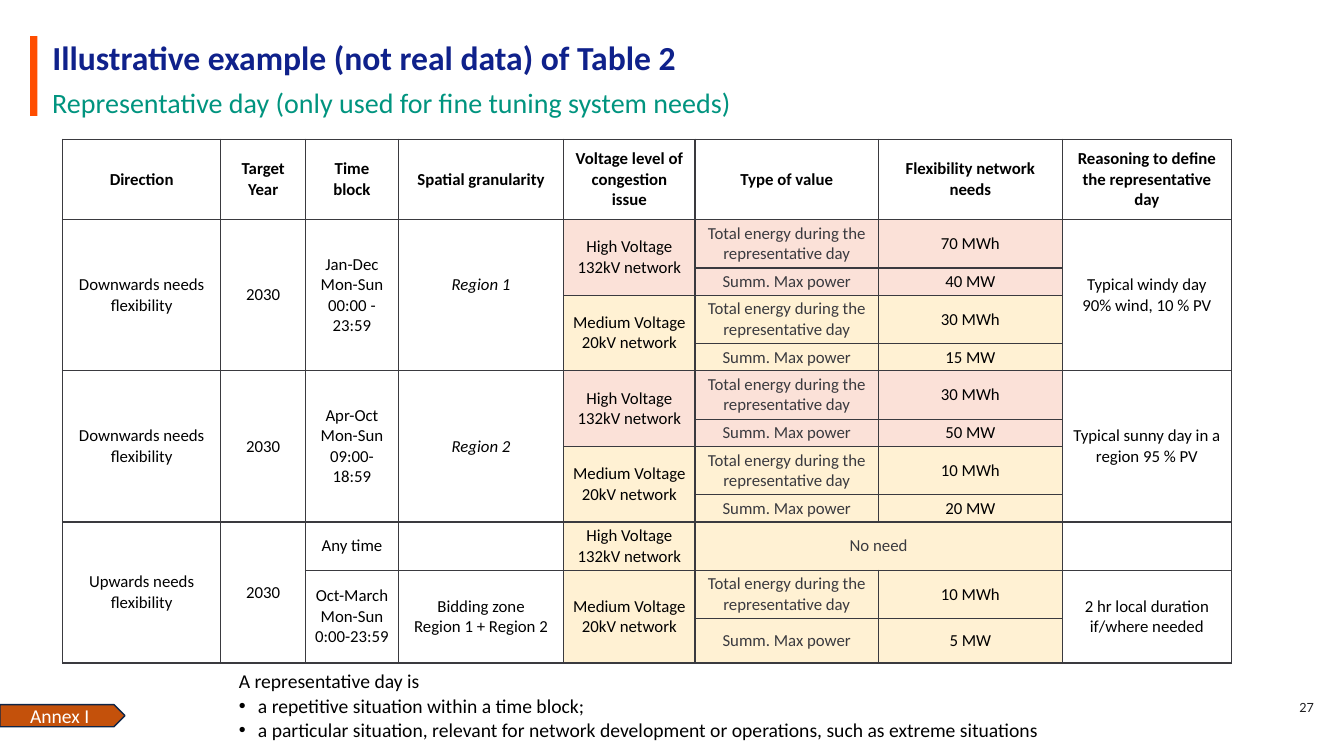
from dataclasses import dataclass
from typing import Any

from lxml.etree import SubElement
from pptx import Presentation
from pptx.dml.color import RGBColor
from pptx.enum.shapes import MSO_SHAPE as Shape
from pptx.enum.text import MSO_ANCHOR as Anchor, MSO_AUTO_SIZE as AutoSize, PP_ALIGN as Align
from pptx.oxml.ns import qn
from pptx.util import Inches, Pt

WIDTH, HEIGHT = Inches(13.33), Inches(7.5)
GREY, BLACK = "3A3A3F", "000000"
PINK, CREAM = "FBE1D8", "FFF1D3"
COLS = (1.57, 0.84, 0.92, 1.64, 1.3, 1.82, 1.82, 1.68)
ROWS = (0.8, *(0.48, 0.27) * 4, 0.48, 0.48, 0.44)
HEADERS = ("Direction", "Target Year", "Time\nblock", "Spatial granularity",
           "Voltage level of\ncongestion\nissue", "Type of value",
           "Flexibility network needs", "Reasoning to define the representative day")
HIGH, MEDIUM = "High Voltage\n132kV network", "Medium Voltage 20kV network"


@dataclass
class Box:
    """Place and size in percent of the slide."""
    x: float
    y: float
    w: float
    h: float

    def emu(self) -> tuple[int, ...]:
        sides = (WIDTH, HEIGHT, WIDTH, HEIGHT)
        return tuple(round(v * s / 100)
                     for v, s in zip((self.x, self.y, self.w, self.h), sides))


@dataclass
class Entry:
    """One table cell, with the rows and columns it spans."""
    row: int
    col: int
    text: str
    rows: int = 1
    cols: int = 1
    fill: str | None = None
    color: str = BLACK
    bold: bool = False
    italic: bool = False
    bottom: float = 0.035


@dataclass
class Need:
    """Energy and power needed at one voltage level, on two rows."""
    row: int
    level: str
    fill: str
    energy: str
    power: str

    def entries(self) -> list[Entry]:
        found = [Entry(self.row, 4, self.level, rows=2, fill=self.fill)]
        kinds = (("Total energy during the representative day", self.energy),
                 ("Summ. Max power", self.power))
        for r, (kind, value) in enumerate(kinds, self.row):
            found += [Entry(r, 5, kind, fill=self.fill, color=GREY),
                      Entry(r, 6, value, fill=self.fill)]
        return found


ENTRIES = [Entry(0, c, text, bold=True) for c, text in enumerate(HEADERS)]
for row, span, direction in ((1, 4, "Downwards"), (5, 4, "Downwards"), (9, 3, "Upwards")):
    ENTRIES += [Entry(row, 0, f"{direction} needs flexibility", rows=span),
                Entry(row, 1, "2030", rows=span)]
ENTRIES += [
    Entry(1, 2, "Jan-Dec\nMon-Sun\n00:00 - 23:59", rows=4),
    Entry(1, 3, "Region 1", rows=4, italic=True, bottom=0.24),
    Entry(1, 7, "Typical windy day\n90% wind, 10 % PV", rows=4),
    Entry(5, 2, "Apr-Oct\nMon-Sun\n09:00-18:59", rows=4),
    Entry(5, 3, "Region 2", rows=4, italic=True),
    Entry(5, 7, "Typical sunny day in a region 95 % PV", rows=4),
    Entry(9, 2, "Any time"),
    Entry(9, 4, HIGH, fill=CREAM),
    Entry(9, 5, "No need", cols=2, fill=CREAM, color=GREY),
    Entry(10, 2, "Oct-March\nMon-Sun\n0:00-23:59", rows=2),
    Entry(10, 3, "Bidding zone\nRegion 1 + Region 2", rows=2),
    Entry(10, 7, "2 hr local duration if/where needed", rows=2),
]
for need in (Need(1, HIGH, PINK, "70 MWh", "40 MW"),
             Need(3, MEDIUM, CREAM, "30 MWh", "15 MW"),
             Need(5, HIGH, PINK, "30 MWh", "50 MW"),
             Need(7, MEDIUM, CREAM, "10 MWh", "20 MW"),
             Need(10, MEDIUM, CREAM, "10 MWh", "5 MW")):
    ENTRIES += need.entries()


def rgb(value: str) -> RGBColor:
    return RGBColor.from_string(value)


def apply(target: Any, formats: dict[str, Any]) -> None:
    for name, value in formats.items():
        setattr(target, name, value)


def write(tf: Any, text: str, size: float, color: str, align: Align = Align.LEFT,
          font: str = "Calibri", bold: bool = False, italic: bool = False) -> None:
    """Write each line of the text as a paragraph."""
    for i, line in enumerate(text.split("\n")):
        p = tf.add_paragraph() if i else tf.paragraphs[0]
        p.alignment = align
        r = p.add_run()
        r.text = line
        apply(r.font, {"name": font, "size": Pt(size), "bold": bold, "italic": italic})
        r.font.color.rgb = rgb(color)


def add_text(slide: Any, box: Box, anchor: Anchor = Anchor.MIDDLE) -> Any:
    tf = slide.shapes.add_textbox(*box.emu()).text_frame
    apply(tf, {"word_wrap": True, "vertical_anchor": anchor})
    return tf


def add_block(slide: Any, kind: Shape, box: Box, fill: str, line: str | None = None) -> Any:
    sp = slide.shapes.add_shape(kind, *box.emu())
    sp.shadow.inherit = False
    sp.fill.solid()
    sp.fill.fore_color.rgb = rgb(fill)
    if line:
        sp.line.color.rgb = rgb(line)
        sp.line.width = Pt(1)
    else:
        sp.line.fill.background()
    return sp


def add_borders(cell: Any) -> None:
    tcPr = cell._tc.get_or_add_tcPr()
    for side in ("lnL", "lnR", "lnT", "lnB"):
        ln = SubElement(tcPr, qn(f"a:{side}"), w=str(Pt(1)))
        SubElement(SubElement(ln, qn("a:solidFill")), qn("a:srgbClr"), val=GREY)


def add_needs_table(slide: Any, box: Box) -> None:
    x, y, w, h = box.emu()
    table = slide.shapes.add_table(len(ROWS), len(COLS), x, y, w, h).table
    apply(table, {"first_row": False, "horz_banding": False})
    for col, share in zip(table.columns, COLS):
        col.width = round(w * share / sum(COLS))
    for row, share in zip(table.rows, ROWS):
        row.height = round(h * share / sum(ROWS))
    for cell in table.iter_cells():
        add_borders(cell)
        cell.fill.background()
    for e in ENTRIES:
        cell = table.cell(e.row, e.col)
        if e.rows > 1 or e.cols > 1:
            cell.merge(table.cell(e.row + e.rows - 1, e.col + e.cols - 1))
        apply(cell, {"margin_left": Inches(0.07), "margin_right": Inches(0.07),
                     "margin_top": Inches(0.035), "margin_bottom": Inches(e.bottom),
                     "vertical_anchor": Anchor.MIDDLE})
        if e.fill:
            cell.fill.solid()
            cell.fill.fore_color.rgb = rgb(e.fill)
        write(cell.text_frame, e.text, 12, e.color, Align.CENTER,
              bold=e.bold, italic=e.italic)


def add_note(slide: Any, box: Box) -> None:
    tf = add_text(slide, box, Anchor.TOP)
    write(tf, "A representative day is\n"
              "a repetitive situation within a time block;\n"
              "a particular situation, relevant for network development or operations, "
              "such as extreme situations", 14, BLACK)
    for p in tf.paragraphs[:2]:
        apply(p, {"alignment": Align.JUSTIFY, "line_spacing": 1.07})
    for p in tf.paragraphs[1:]:
        pPr = p._p.get_or_add_pPr()
        pPr.set("marL", str(Inches(0.19)))
        pPr.set("indent", str(-Inches(0.19)))
        SubElement(pPr, qn("a:buFont"), typeface="Arial")
        SubElement(pPr, qn("a:buChar"), char="•")


def main() -> None:
    prs = Presentation()
    apply(prs, {"slide_width": WIDTH, "slide_height": HEIGHT})
    slide = prs.slides.add_slide(prs.slide_layouts[5])

    write(add_text(slide, Box(50.64, 90.93, 47.86, 5.33)), "27", 9, "1D1D20",
          Align.RIGHT, "Lato")
    add_block(slide, Shape.RECTANGLE, Box(2.25, 4.8, 0.53, 10.53), "FF4D00")

    title = slide.shapes.title
    place = Box(3.15, 4.93, 95.35, 5.2).emu()
    apply(title, dict(zip(("left", "top", "width", "height"), place)))
    apply(title.text_frame, {"word_wrap": True, "auto_size": AutoSize.NONE,
                             "vertical_anchor": Anchor.MIDDLE})
    write(title.text_frame, "Illustrative example (not real data) of Table 2",
          24, "0F218B", bold=True)

    subtitle = add_text(slide, Box(3.15, 10.13, 95.35, 6.4))
    write(subtitle, "Representative day (only used for fine tuning system needs)",
          20, "00947F")
    subtitle.paragraphs[0].line_spacing = Pt(26)

    add_needs_table(slide, Box(4.65, 18.4, 87, 69.33))
    add_note(slide, Box(17.03, 87.6, 62.19, 11.2))
    tag = add_block(slide, Shape.PENTAGON, Box(0, 93.2, 9.3, 2.93), "C4510B", "0E2548")
    tag.text_frame.vertical_anchor = Anchor.MIDDLE
    write(tag.text_frame, "Annex I", 14, "FFFFFF", Align.CENTER)
    prs.save("out.pptx")


if __name__ == "__main__":
    main()
